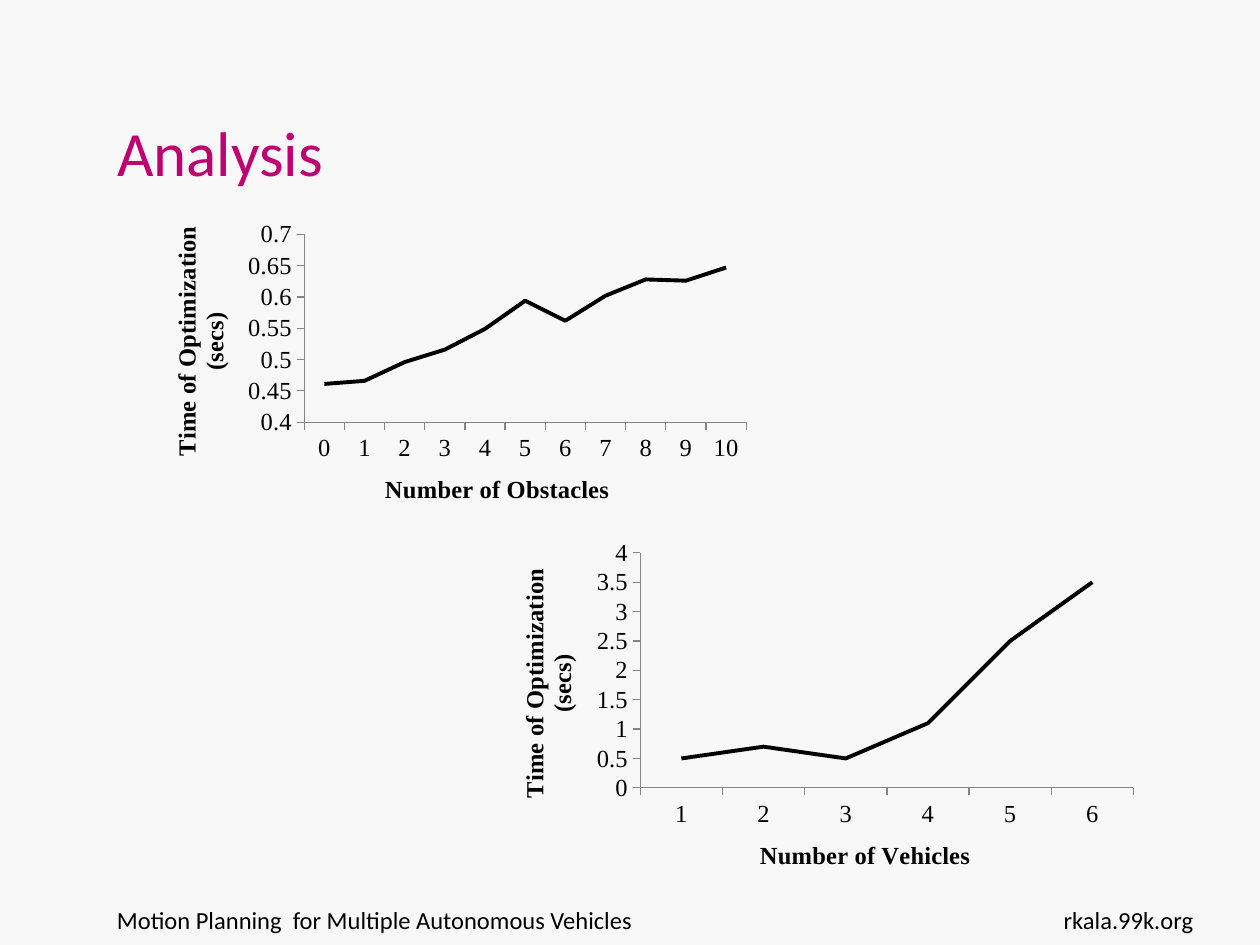
from pptx import Presentation
from pptx import util as u
from pptx.chart.data import CategoryChartData
from pptx.dml.color import RGBColor
from pptx.enum import chart as ch, text as tx

HEX = {"back": "F8F8F8", "title": "BF0071", "ink": "000000", "axis": "868686"}
SANS, SERIF = "Calibri", "Times New Roman"
CELL = 0.1  # grid step in inches: 100 columns by 75 rows


def color(name):
    return RGBColor.from_string(HEX[name])


def grid(col, row, cols, rows):
    return [u.Inches(n * CELL) for n in (col, row, cols, rows)]


def style(font, size=14, face=SANS, ink="ink", bold=False):
    font.size, font.name, font.bold = u.Pt(size), face, bold
    font.color.rgb = color(ink)


def write(frame, words, align=tx.PP_ALIGN.LEFT, anchor=tx.MSO_ANCHOR.TOP,
          wrap=True, **look):
    frame.word_wrap = wrap
    frame.auto_size = tx.MSO_AUTO_SIZE.NONE
    frame.vertical_anchor = anchor
    para = frame.paragraphs[0]
    para.alignment = align
    run = para.add_run()
    run.text = words
    style(run.font, **look)


def note(slide, place, words, **look):
    write(slide.shapes.add_textbox(*grid(*place)).text_frame, words, **look)


def set_axis(axis, words):
    axis.has_major_gridlines = False
    axis.major_tick_mark = ch.XL_TICK_MARK.OUTSIDE
    axis.minor_tick_mark = ch.XL_TICK_MARK.NONE
    axis.format.line.color.rgb = color("axis")
    axis.format.line.width = u.Pt(0.75)
    style(axis.tick_labels.font, face=SERIF)
    run = axis.axis_title.text_frame.paragraphs[0].add_run()
    run.text = words
    style(run.font, face=SERIF, bold=True)


def plot(slide, place, topic, cats, vals, low, high, step):
    data = CategoryChartData()
    data.categories = [str(c) for c in cats]
    data.add_series("Series 1", vals)
    chart = slide.shapes.add_chart(
        ch.XL_CHART_TYPE.LINE, *grid(*place), data).chart
    chart.has_legend = chart.has_title = False
    style(chart.font, face=SERIF)
    set_axis(chart.category_axis, topic)
    set_axis(chart.value_axis, "Time of Optimization (secs)")
    axis = chart.value_axis
    axis.minimum_scale, axis.maximum_scale = low, high
    axis.major_unit = step
    chart.plots[0].vary_by_categories = False
    line = chart.plots[0].series[0]
    line.smooth = False
    line.marker.style = ch.XL_MARKER_STYLE.NONE
    line.format.line.color.rgb = color("ink")
    line.format.line.width = u.Pt(2.25)


def main():
    deck = Presentation()
    deck.slide_width, deck.slide_height = grid(0, 0, 100, 75)[2:]
    slide = deck.slides.add_slide(deck.slide_layouts[5])
    slide.background.fill.solid()
    slide.background.fill.fore_color.rgb = color("back")

    # Title
    title = slide.shapes.title
    title.left, title.top, title.width, title.height = grid(8.3, 3, 67.7, 12.5)
    write(title.text_frame, "Analysis", anchor=tx.MSO_ANCHOR.BOTTOM,
          wrap=False, size=36, ink="title")

    # Time against obstacles, then against vehicles
    plot(slide, (11.4, 17, 48.8, 25.2), "Number of Obstacles", range(11),
         (0.461, 0.466, 0.496, 0.516, 0.549, 0.594,
          0.562, 0.602, 0.628, 0.626, 0.647), 0.4, 0.7, 0.05)
    plot(slide, (39, 42.2, 52, 29.1), "Number of Vehicles", range(1, 7),
         (0.5, 0.7, 0.5, 1.1, 2.5, 3.5), 0, 4, 0.5)

    # Footer
    note(slide, (8.3, 71.3, 69.3, 5.2),
         "Motion Planning  for Multiple Autonomous Vehicles")
    note(slide, (80.7, 71.3, 15, 5.2), "rkala.99k.org",
         align=tx.PP_ALIGN.RIGHT)

    deck.save("out.pptx")


if __name__ == "__main__":
    main()
